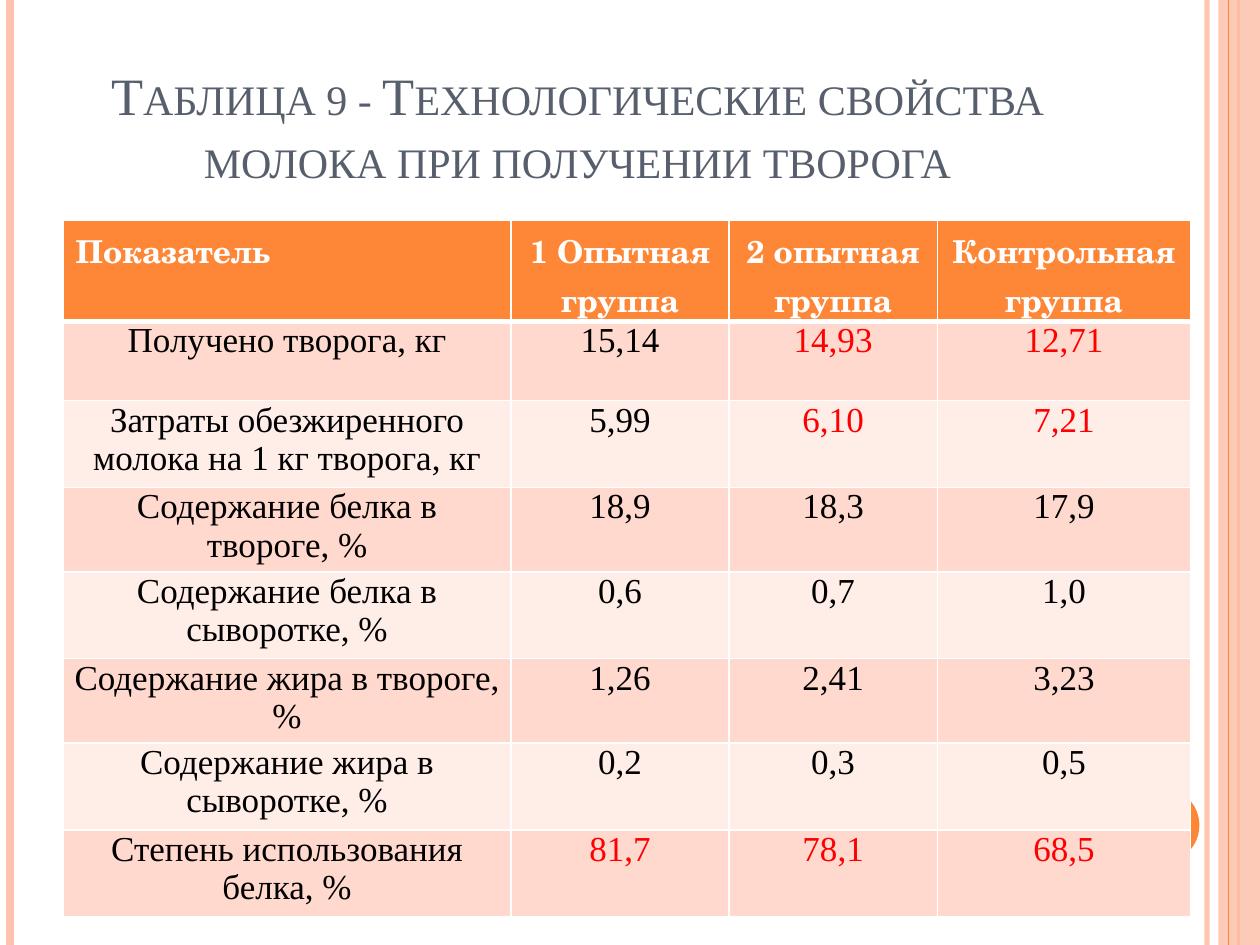
from lxml import etree
from pptx import Presentation
from pptx.dml.color import RGBColor
from pptx.enum import shapes, text
from pptx.oxml import ns
from pptx.util import Pt


def rgb(value):
    return RGBColor.from_string(value)


def write(frame, content, size=20, color="000000", font="Times New Roman",
          bold=False, align="CENTER", spacing=None, small_caps=False):
    frame.word_wrap = True
    paragraph = frame.paragraphs[0]
    paragraph.alignment = getattr(text.PP_ALIGN, align)
    if spacing:
        paragraph.line_spacing = Pt(spacing)
    run = paragraph.add_run()
    run.text = content
    run.font.size = Pt(size)
    run.font.name = font
    run.font.bold = bold
    run.font.color.rgb = rgb(color)
    if small_caps:
        run.font._element.set("cap", "small")


ORANGE, PEACH, RED = "FE8637", "FEC3AE", "FF0000"

deck = Presentation()
deck.slide_width, deck.slide_height = Pt(720), Pt(540)
slide = deck.slides.add_slide(deck.slide_layouts[6])

stripes = [
    ("line", 689.8, 3, PEACH, 93),
    ("line", 5.8, 4.5, PEACH, 100),
    ("line", 707.8, 1.5, ORANGE, 100),
    ("band", 696.2, 23.8, PEACH, 87),
    ("line", 702, 0.75, ORANGE, 100),
]
for kind, x, width, color, opacity in stripes:
    if kind == "line":
        stripe = slide.shapes.add_connector(
            shapes.MSO_CONNECTOR.STRAIGHT, Pt(x), Pt(0), Pt(x), Pt(540))
        stripe.line.width = Pt(width)
        paint = stripe.line.fill
        etree.SubElement(stripe._element.spPr, ns.qn("a:effectLst"))
    else:
        stripe = slide.shapes.add_shape(
            shapes.MSO_SHAPE.RECTANGLE, Pt(x), Pt(0), Pt(width), Pt(540))
        stripe.shadow.inherit = False
        stripe.line.fill.background()
        paint = stripe.fill
    paint.solid()
    paint.fore_color.rgb = rgb(color)
    if opacity < 100:
        tint = next(stripe._element.spPr.iter(ns.qn("a:srgbClr")))
        etree.SubElement(tint, ns.qn("a:alpha"), val=str(opacity * 1000))

circle = slide.shapes.add_shape(
    shapes.MSO_SHAPE.OVAL, Pt(642.2), Pt(450), Pt(43.2), Pt(43.2))
circle.shadow.inherit = False
circle.fill.solid()
circle.fill.fore_color.rgb = rgb(ORANGE)
circle.line.fill.background()

title = slide.shapes.add_textbox(Pt(36), Pt(21.6), Pt(588), Pt(90)).text_frame
title.vertical_anchor = text.MSO_ANCHOR.BOTTOM
write(title, "Таблица 9 - Технологические свойства молока при получении творога",
      size=30, color="575F6D", spacing=36, small_caps=True)

indicators = [
    ("Показатель", "1 Опытная группа", "2 опытная группа", "Контрольная группа"),
    ("Получено творога, кг", "15,14", "14,93", "12,71"),
    ("Затраты обезжиренного молока на 1 кг творога, кг", "5,99", "6,10", "7,21"),
    ("Содержание белка в твороге, %", "18,9", "18,3", "17,9"),
    ("Содержание белка в сыворотке, %", "0,6", "0,7", "1,0"),
    ("Содержание жира в твороге, %", "1,26", "2,41", "3,23"),
    ("Содержание жира в сыворотке, %", "0,2", "0,3", "0,5"),
    ("Степень использования белка, %", "81,7", "78,1", "68,5"),
]
highlighted = {(1, 2), (1, 3), (2, 2), (2, 3), (7, 1), (7, 2), (7, 3)}
column_widths = [256.1, 124.5, 119, 144.8]
row_heights = [57.6, 45.4, 49.7, 46.1, 49.7, 45.4, 49.7, 49.7]

table = slide.shapes.add_table(
    len(indicators), len(column_widths), Pt(36), Pt(126),
    Pt(sum(column_widths)), Pt(sum(row_heights))).table
for column, width in zip(table.columns, column_widths):
    column.width = Pt(width)
for row, height in zip(table.rows, row_heights):
    row.height = Pt(height)

for r, indicator in enumerate(indicators):
    for c, content in enumerate(indicator):
        cell = table.cell(r, c)
        if r == 0:
            write(cell.text_frame, content, size=18, color="FFFFFF", bold=True,
                  font="TeX Gyre Schola", align="CENTER" if c else "LEFT")
        else:
            cell.margin_left = cell.margin_right = Pt(5)
            cell.margin_top = cell.margin_bottom = Pt(0)
            write(cell.text_frame, content,
                  color=RED if (r, c) in highlighted else "000000")
        properties = cell._tc.get_or_add_tcPr()
        for side in ("lnL", "lnR", "lnT", "lnB"):
            thick = (r, side) in ((0, "lnB"), (1, "lnT"))
            border = etree.SubElement(properties, ns.qn("a:" + side),
                                      w=str(Pt(3 if thick else 1)))
            fill = etree.SubElement(border, ns.qn("a:solidFill"))
            etree.SubElement(fill, ns.qn("a:srgbClr"), val="FFFFFF")
        cell.fill.solid()
        cell.fill.fore_color.rgb = rgb(
            ORANGE if r == 0 else "FFD9CE" if r % 2 else "FFEDE8")

deck.save("out.pptx")
